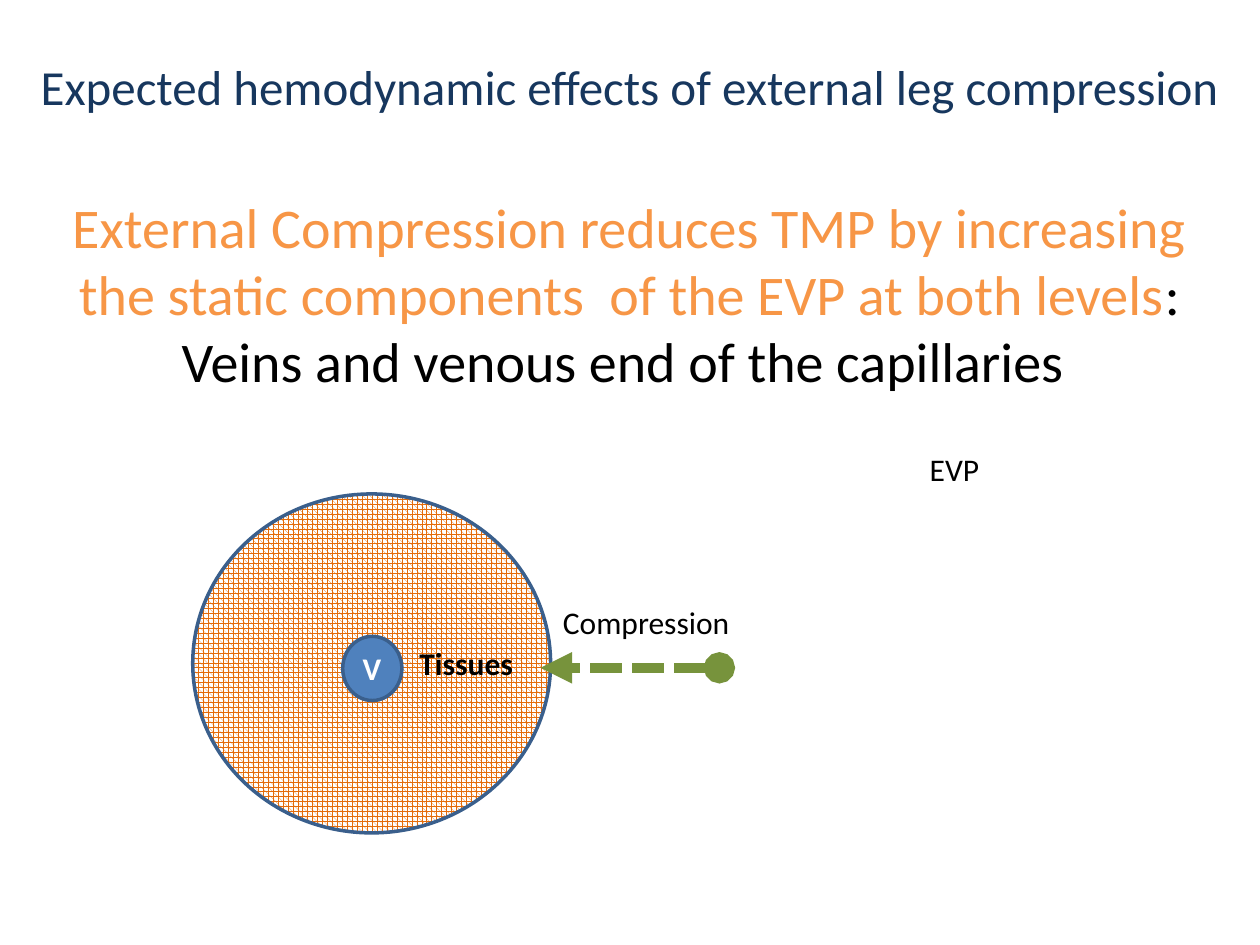
import dataclasses
import typing

import lxml.etree
import pptx
import pptx.dml.color
import pptx.enum.dml
import pptx.enum.shapes
import pptx.enum.text
import pptx.oxml.ns
import pptx.util

Inches = pptx.util.Inches
Pt = pptx.util.Pt
qn = pptx.oxml.ns.qn


@dataclasses.dataclass(frozen=True)
class Theme:
    font: str = "Calibri"
    black: str = "000000"
    white: str = "FFFFFF"
    navy: str = "17375E"
    orange: str = "F79646"
    tissue: str = "E46C0A"
    vein: str = "4F81BD"
    edge: str = "3A5F8C"
    green: str = "77933C"
    head: int = 28
    body: int = 32
    label: int = 18


THEME = Theme()


class Box(typing.NamedTuple):
    left: float
    top: float
    width: float
    height: float


class Run(typing.NamedTuple):
    text: str
    size: int = THEME.label
    color: str = THEME.black
    bold: bool = False


class Label(typing.NamedTuple):
    box: Box
    run: Run


def rgb(code: str) -> pptx.dml.color.RGBColor:
    return pptx.dml.color.RGBColor.from_string(code)


def place(box: Box) -> list:
    return [Inches(side) for side in box]


def add_run(para, run: Run) -> None:
    part = para.add_run()
    part.text = run.text
    style = {"name": THEME.font, "size": Pt(run.size), "bold": run.bold}
    for key, value in style.items():
        setattr(part.font, key, value)
    part.font.color.rgb = rgb(run.color)


def add_text(slide, box: Box, paras: list, center: bool = False, gap: int = 0) -> None:
    frame = slide.shapes.add_textbox(*place(box)).text_frame
    frame.word_wrap = True
    for index, runs in enumerate(paras):
        para = frame.add_paragraph() if index else frame.paragraphs[0]
        if center:
            para.alignment = pptx.enum.text.PP_ALIGN.CENTER
        if index:
            para.space_before = Pt(gap)
        for run in runs:
            add_run(para, run)


def add_oval(slide, box: Box, color: str, mesh: bool = False) -> None:
    oval = slide.shapes.add_shape(pptx.enum.shapes.MSO_SHAPE.OVAL, *place(box))
    oval.shadow.inherit = False
    if mesh:
        oval.fill.patterned()
        oval.fill.pattern = pptx.enum.dml.MSO_PATTERN.SPHERE
        oval.fill.fore_color.rgb = rgb(color)
        oval.fill.back_color.rgb = rgb(THEME.white)
    else:
        oval.fill.solid()
        oval.fill.fore_color.rgb = rgb(color)
    oval.line.color.rgb = rgb(THEME.edge)
    oval.line.width = Pt(2)


def add_arrow(slide, start: float, end: float, level: float) -> None:
    arrow = slide.shapes.add_connector(
        pptx.enum.shapes.MSO_CONNECTOR.STRAIGHT,
        Inches(start), Inches(level), Inches(end), Inches(level))
    arrow.line.color.rgb = rgb(THEME.green)
    arrow.line.width = Pt(6)
    props = arrow._element.spPr
    line = props.find(qn("a:ln"))
    ends = {"a:prstDash": ("val", "sysDash"),
            "a:headEnd": ("type", "oval"),
            "a:tailEnd": ("type", "triangle")}
    for tag, (key, value) in ends.items():
        lxml.etree.SubElement(line, qn(tag)).set(key, value)
    lxml.etree.SubElement(props, qn("a:effectLst"))


def main() -> None:
    deck = pptx.Presentation()
    deck.slide_width, deck.slide_height = Inches(10), Inches(7.5)
    slide = deck.slides.add_slide(deck.slide_layouts[6])

    # Heading and main statement
    title = Run("Expected hemodynamic effects of external leg compression",
                THEME.head, THEME.navy)
    claim = Run("External Compression reduces TMP by increasing the static "
                "components  of the EVP at both levels", THEME.body, THEME.orange)
    sites = Run(": Veins and venous end of the capillaries ", THEME.body)
    add_text(slide, Box(0.19, 0.4, 9.61, 3.4), [[title], [claim, sites]],
             center=True, gap=44)

    # Leg section: tissue around the vein, pressed from outside
    add_oval(slide, Box(1.53, 3.92, 2.84, 2.69), THEME.tissue, mesh=True)
    add_arrow(slide, 5.71, 4.29, 5.3)
    add_oval(slide, Box(2.72, 5.05, 0.47, 0.51), THEME.vein)

    # Labels
    labels = [
        Label(Box(7.28, 3.52, 1.18, 0.4), Run("EVP")),
        Label(Box(3.23, 5.06, 1.18, 0.4), Run("Tissues", bold=True)),
        Label(Box(4.37, 4.74, 1.57, 0.4), Run("Compression")),
        Label(Box(2.78, 5.1, 0.41, 0.4), Run("V", color=THEME.white, bold=True)),
    ]
    for label in labels:
        add_text(slide, label.box, [[label.run]])

    deck.save("out.pptx")


if __name__ == "__main__":
    main()
